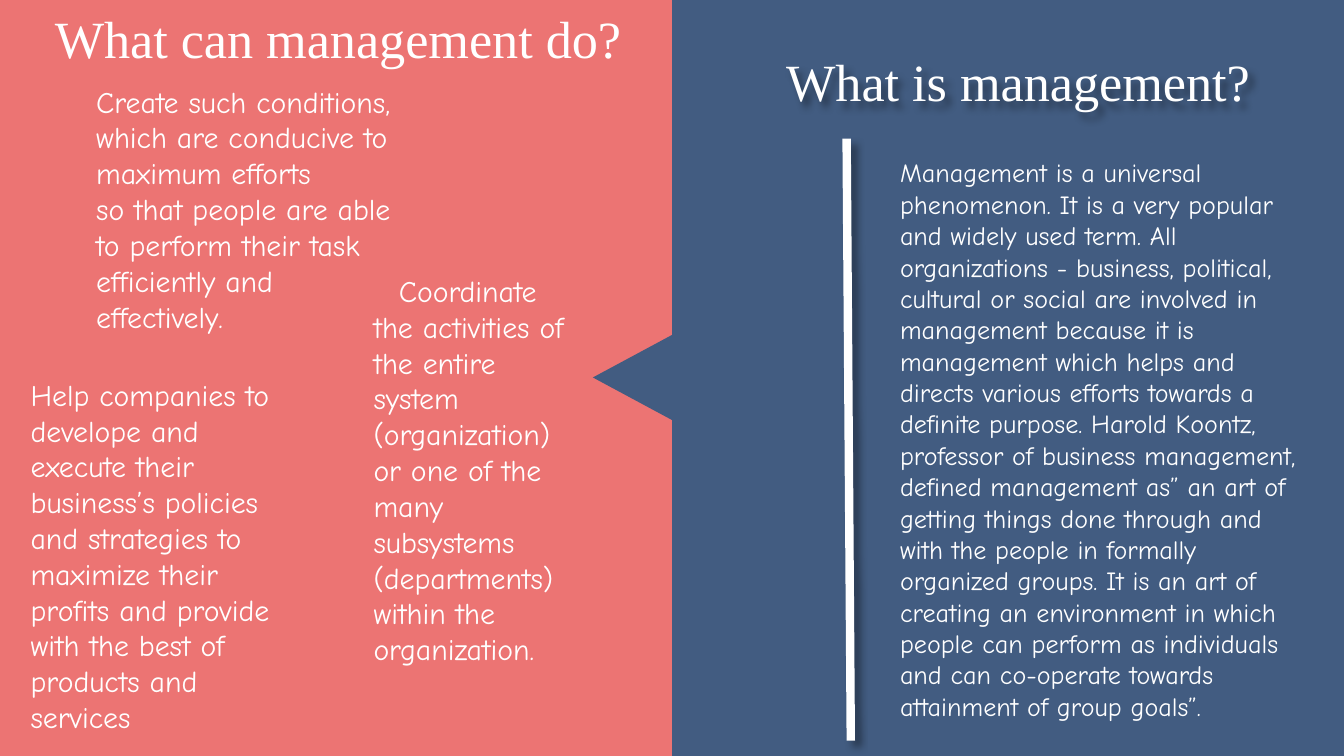
"""Build a two-panel slide on what management is and what it can do."""
from lxml.etree import SubElement
from pptx import Presentation
from pptx.dml.color import RGBColor
from pptx.enum.shapes import MSO_CONNECTOR as Connector, MSO_SHAPE as Shape
from pptx.enum.text import MSO_AUTO_SIZE as AutoSize, PP_ALIGN as Align
from pptx.oxml.ns import qn
from pptx.util import Cm, Pt

WIDTH, HEIGHT = 25.4, 14.29
NAVY, CORAL, WHITE = "425C81", "EC7473", "FFFFFF"
TITLE_FONT, BODY_FONT = "Times New Roman", "Comic Neue"

DEFINITION = (
    "Management is a universal phenomenon. It is a very popular and widely used term. "
    "All organizations - business, political, cultural or social are involved in "
    "management because it is management which helps and directs various efforts towards "
    "a definite purpose. Harold Koontz, professor of business management, defined "
    "management as” an art of getting things done through and with the people in formally "
    "organized groups. It is an art of creating an environment in which people can perform "
    "as individuals and can co-operate towards attainment of group goals”."
)
POLICIES = (
    "Help companies to develope and execute their business’s policies and strategies to "
    "maximize their profits and provide with the best of products and services"
)
COORDINATION = (
    "Coordinate the activities of the entire system (organization) or one of the many "
    "subsystems (departments) within the organization."
)
CONDITIONS = [
    "Create such conditions,",
    "which are conducive to maximum efforts",
    "so that people are able to perform their task",
    "efficiently and effectively.",
]


def color(value):
    return RGBColor.from_string(value)


def add_panel(page, kind, place, fill):
    panel = page.shapes.add_shape(kind, *map(Cm, place))
    panel.shadow.inherit = False
    panel.fill.solid()
    panel.fill.fore_color.rgb = color(fill)
    panel.line.fill.background()
    return panel


def add_shadow(shape):
    effects = SubElement(shape._element.spPr, qn("a:effectLst"))
    outer = SubElement(effects, qn("a:outerShdw"), blurRad=str(Pt(4)), dist=str(Pt(4)),
                       dir="2700000", algn="tl", rotWithShape="0")
    black = SubElement(outer, qn("a:srgbClr"), val="000000")
    SubElement(black, qn("a:alpha"), val="40000")


def add_text(page, place, lines, size, font=BODY_FONT, align=Align.LEFT, after=0, indent=0):
    box = page.shapes.add_textbox(*map(Cm, place))
    frame = box.text_frame
    frame.word_wrap = True
    frame.auto_size = AutoSize.SHAPE_TO_FIT_TEXT
    frame.text = "\n".join(lines)
    for para in frame.paragraphs:
        para.alignment = align
        para.space_after = Pt(after)
        para.font.name = font
        para.font.size = Pt(size)
        para.font.color.rgb = color(WHITE)
        if indent:
            para._p.get_or_add_pPr().set("indent", str(Cm(indent)))
    return box


def main():
    deck = Presentation()
    deck.slide_width, deck.slide_height = Cm(WIDTH), Cm(HEIGHT)
    page = deck.slides.add_slide(deck.slide_layouts[6])
    page.background.fill.solid()
    page.background.fill.fore_color.rgb = color(NAVY)

    add_panel(page, Shape.RECTANGLE, (0, 0, WIDTH / 2, HEIGHT), CORAL)
    divider = page.shapes.add_connector(Connector.STRAIGHT, Cm(16.08), Cm(14), Cm(16), Cm(2.62))
    divider.line.color.rgb = color(WHITE)
    divider.line.width = Pt(4.5)
    add_shadow(divider)

    add_text(page, (16.76, 2.84, 8.03, 10.92), [DEFINITION], 14, after=6)
    add_text(page, (0, 0, 12.78, 1.45), ["What can management do?"], 28, TITLE_FONT, Align.CENTER)
    add_text(page, (0.33, 6.99, 5.56, 7.04), [POLICIES], 16)
    pointer = add_panel(page, Shape.ISOSCELES_TRIANGLE, (11.1, 5.74, 3, 2.79), NAVY)
    pointer.rotation = 270
    heading = add_text(page, (14.61, 0.81, 10.21, 1.45), ["What is management?"], 28, TITLE_FONT)
    add_shadow(heading)
    add_text(page, (6.81, 5.03, 4.37, 7.7), [COORDINATION], 16, indent=0.48)
    add_text(page, (1.57, 1.45, 6.27, 5), CONDITIONS, 16)

    deck.save("out.pptx")


if __name__ == "__main__":
    main()
